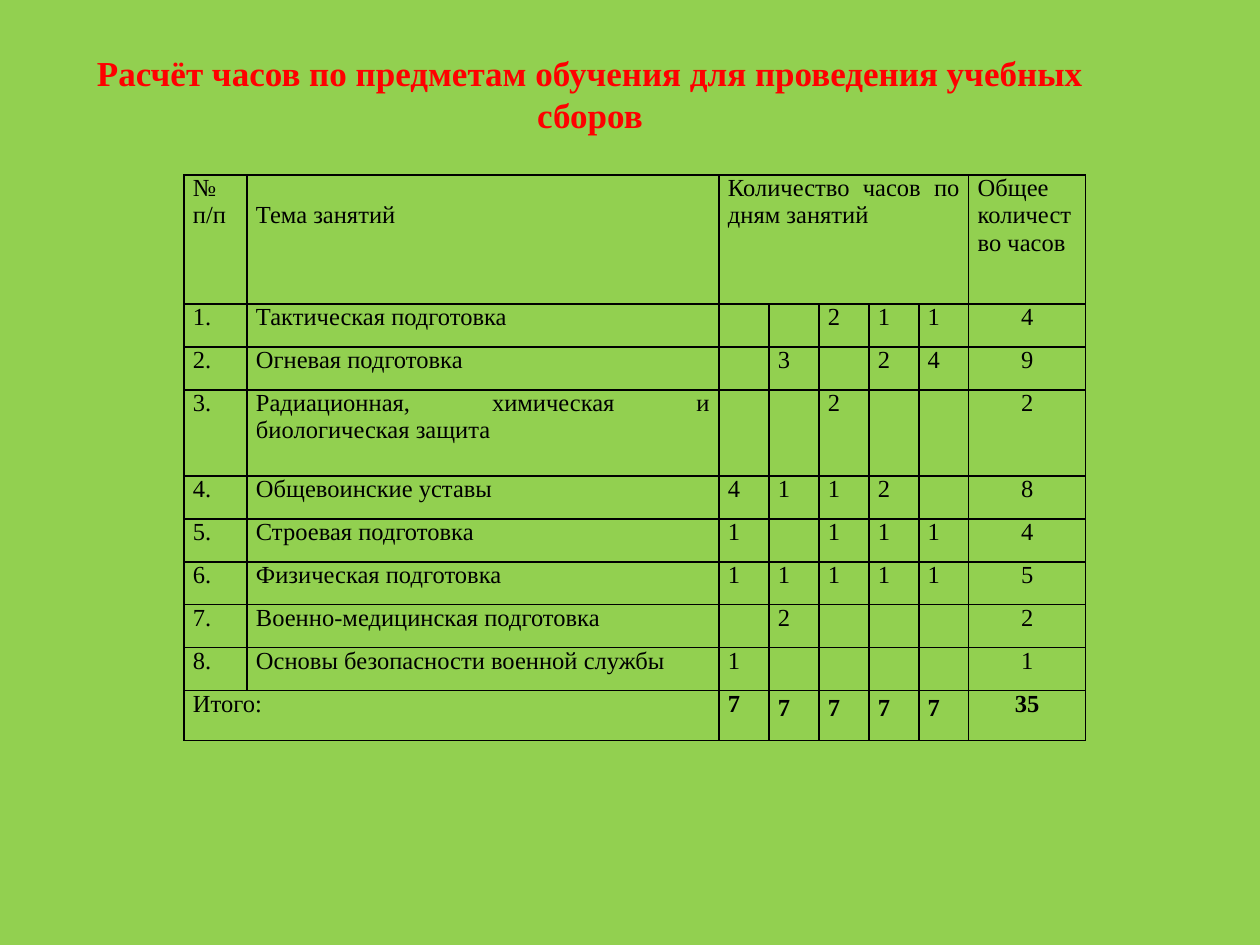
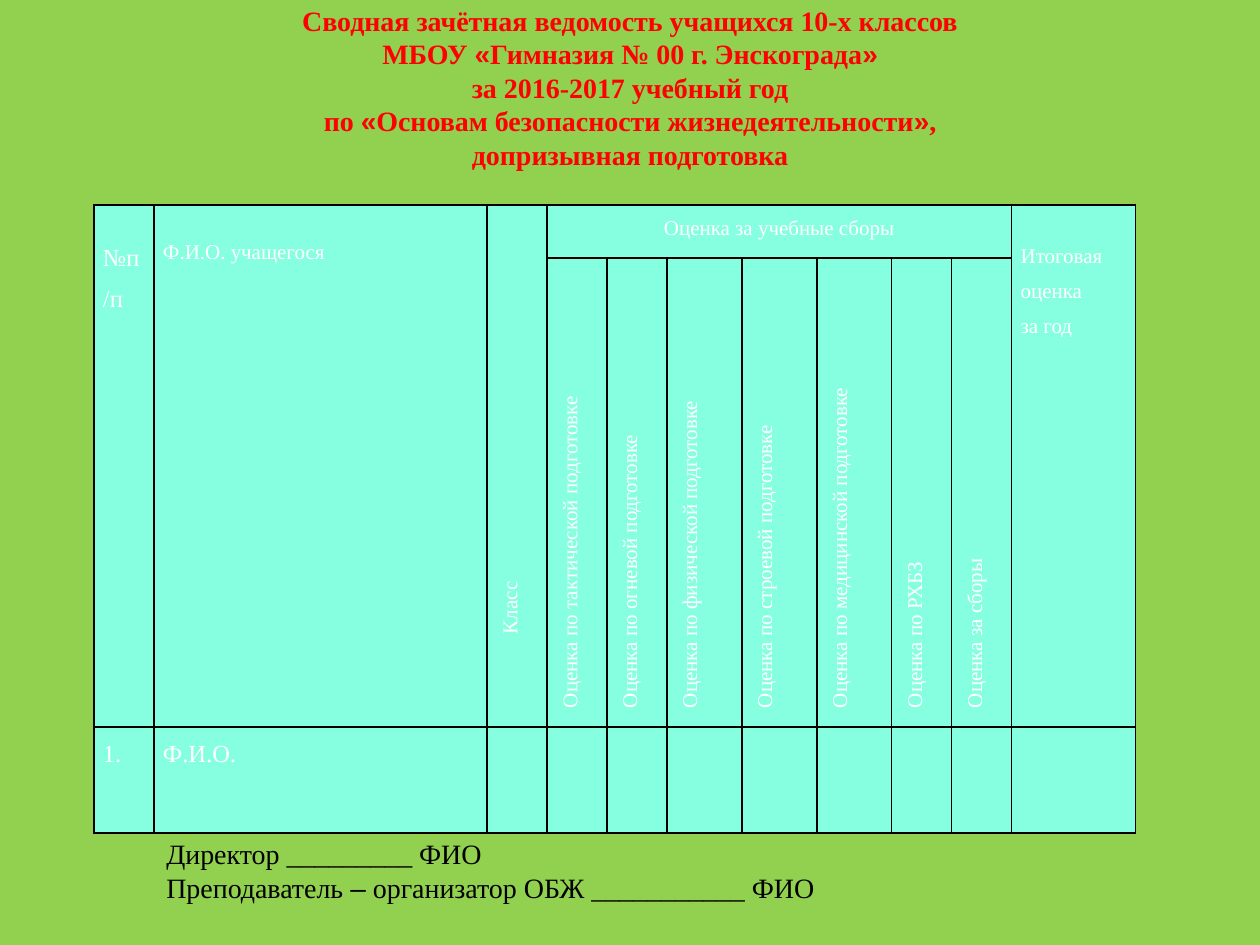
from itertools import groupby

from lxml import etree
from pptx import Presentation
from pptx.dml.color import RGBColor
from pptx.enum.text import MSO_ANCHOR as ANCHOR, PP_ALIGN as ALIGN
from pptx.oxml.ns import qn
from pptx.util import Pt

PX = 914400 / 126  # EMU in one px
COLORS = {"back": "92D050", "title": "FF0000", "ink": "000000",
          "cell": "85FFE0", "white": "FFFFFF"}
FONT, MARK_FONT, MARKS = "Times New Roman", "Arial", "«»–"


def write(tf, lines, size, color="ink", bold=False, **para):
    """Write one paragraph per line; para holds paragraph formats."""
    for i, line in enumerate(lines):
        p = tf.add_paragraph() if i else tf.paragraphs[0]
        for name, value in para.items():
            setattr(p, name, value)
        for is_mark, chars in groupby(line, lambda c: c in MARKS):
            r = p.add_run()
            r.text = "".join(chars)
            r.font.color.rgb = RGBColor.from_string(COLORS[color])
            values = {"name": MARK_FONT if is_mark else FONT,
                      "size": Pt(size), "bold": bold}
            for name, value in values.items():
                setattr(r.font, name, value)


def add_grid(slide, left, top, cols, rows, fill=None):
    """Add a table with thin black borders, sized by its columns and rows."""
    box = [round(v * PX) for v in (left, top, sum(cols), sum(rows))]
    table = slide.shapes.add_table(len(rows), len(cols), *box).table
    table.first_row = table.horz_banding = False
    for col, width in zip(table.columns, cols):
        col.width = round(width * PX)
    for row, height in zip(table.rows, rows):
        row.height = round(height * PX)
    for cell in table.iter_cells():
        cell.margin_left = cell.margin_right = round(9 * PX)
        cell.margin_top = cell.margin_bottom = 0
        if fill:
            cell.fill.solid()
            cell.fill.fore_color.rgb = RGBColor.from_string(COLORS[fill])
        else:
            cell.fill.background()
        tcPr = cell._tc.get_or_add_tcPr()
        for i, side in enumerate(("lnL", "lnR", "lnT", "lnB")):
            ln = etree.Element(qn(f"a:{side}"), w=str(Pt(1)))
            line_fill = etree.SubElement(ln, qn("a:solidFill"))
            etree.SubElement(line_fill, qn("a:srgbClr"), val=COLORS["ink"])
            tcPr.insert(i, ln)
    return table


prs = Presentation()
prs.slide_width, prs.slide_height = round(1260 * PX), round(945 * PX)

# Slides with their titles and signature lines:
# box, vertical margin, size, colour, bold, alignment, lines
pages = [
    [((74, 45, 1032, 97), 6, 20, "title", True, ALIGN.CENTER,
      ["Расчёт часов по предметам обучения для проведения учебных сборов"])],
    [((262, 0, 736, 174), 3, 16, "title", True, ALIGN.CENTER,
      ["Сводная зачётная ведомость учащихся 10-х классов",
       "МБОУ «Гимназия № 00 г. Энскограда»",
       "за 2016-2017 учебный год",
       "по «Основам безопасности жизнедеятельности», допризывная подготовка"]),
     ((154, 830, 853, 81), 6, 16, "ink", False, ALIGN.JUSTIFY,
      ["Директор _________ ФИО",
       "Преподаватель – организатор ОБЖ ___________ ФИО"])],
]
slides = []
for boxes in pages:
    s = prs.slides.add_slide(prs.slide_layouts[6])
    s.background.fill.solid()
    s.background.fill.fore_color.rgb = RGBColor.from_string(COLORS["back"])
    for box, margin, size, color, bold, align, lines in boxes:
        sp = s.shapes.add_textbox(*[round(v * PX) for v in box])
        tf = sp.text_frame
        tf.word_wrap, tf.vertical_anchor = True, ANCHOR.MIDDLE
        tf.margin_top = tf.margin_bottom = round(margin * PX)
        write(tf, lines, size, color, bold, alignment=align,
              line_spacing=Pt(1.2 * size))
    slides.append(s)
hours_slide, grades_slide = slides

# Slide 1: hours by subject and day, 0 is an empty cell
subjects = [
    ("Тактическая подготовка", [0, 0, 2, 1, 1]),
    ("Огневая подготовка", [0, 3, 0, 2, 4]),
    ("Радиационная, химическая и биологическая защита", [0, 0, 2, 0, 0]),
    ("Общевоинские уставы", [4, 1, 1, 2, 0]),
    ("Строевая подготовка", [1, 0, 1, 1, 1]),
    ("Физическая подготовка", [1, 1, 1, 1, 1]),
    ("Военно-медицинская подготовка", [0, 2, 0, 0, 0]),
    ("Основы безопасности военной службы", [1, 0, 0, 0, 0]),
]
t = add_grid(hours_slide, 184, 175, [63, 472] + [50] * 5 + [117],
             [129, 43, 43, 86] + [43] * 5 + [50])
last = len(subjects) + 1
t.cell(0, 2).merge(t.cell(0, 6))
t.cell(last, 0).merge(t.cell(last, 1))

headings = {0: ["№", "п/п"], 1: ["Тема занятий"],
            2: ["Количество часов по дням занятий"],
            7: ["Общее количество часов"]}
for col, lines in headings.items():
    write(t.cell(0, col).text_frame, lines, 14, alignment=ALIGN.JUSTIFY)
t.cell(0, 1).margin_top = round(27 * PX)

for row, (subject, hours) in enumerate(subjects, 1):
    values = [f"{row}.", subject] + hours + [sum(hours)]
    for col, value in enumerate(values):
        if value:
            write(t.cell(row, col).text_frame, [str(value)], 14,
                  alignment=ALIGN.CENTER if col == 7 else ALIGN.JUSTIFY)

# Totals row
day_totals = [sum(day) for day in zip(*[hours for _, hours in subjects])]
write(t.cell(last, 0).text_frame, ["Итого:"], 14, alignment=ALIGN.JUSTIFY)
for col, total in enumerate(day_totals + [sum(day_totals)], 2):
    para = {"alignment": ALIGN.CENTER if col == 7 else ALIGN.JUSTIFY}
    if 2 < col < 7:
        para.update(line_spacing=1.15, space_after=Pt(10))
    write(t.cell(last, col).text_frame, [str(total)], 14, bold=True, **para)

# Slide 2: grade sheet
t = add_grid(grades_slide, 94, 205,
             [60, 333] + [60] * 3 + [75] * 3 + [60, 60, 124],
             [53, 469, 106], "cell")
for col in (0, 1, 2, 10):
    t.cell(0, col).merge(t.cell(1, col))
t.cell(0, 3).merge(t.cell(0, 9))

# Level text: row, column, top margin, size, alignment, lines
level_cells = [
    (0, 0, 26, 14, ALIGN.JUSTIFY, ["№п/п"]),
    (0, 1, 24, 12, ALIGN.JUSTIFY, ["Ф.И.О. учащегося"]),
    (0, 3, 0, 12, ALIGN.CENTER, ["Оценка за учебные сборы"]),
    (0, 10, 28, 12, ALIGN.JUSTIFY, ["Итоговая оценка", "за год"]),
    (2, 0, 0, 14, ALIGN.JUSTIFY, ["1."]),
    (2, 1, 0, 14, ALIGN.JUSTIFY, ["Ф.И.О."]),
]
for row, col, margin, size, align, lines in level_cells:
    cell = t.cell(row, col)
    cell.margin_top = round(margin * PX)
    write(cell.text_frame, lines, size, "white", alignment=align,
          line_spacing=1.5)

# Upright text: row, column, indent, text
grades = ["по тактической подготовке", "по огневой подготовке",
          "по физической подготовке", "по строевой подготовке",
          "по медицинской подготовке", "по РХБЗ", "за сборы"]
upright_cells = [(0, 2, 84, "Класс")]
upright_cells += [(1, col, 10, f"Оценка {grade}")
                  for col, grade in enumerate(grades, 3)]
for row, col, indent, text in upright_cells:
    cell = t.cell(row, col)
    cell._tc.get_or_add_tcPr().set("vert", "vert270")
    write(cell.text_frame, [text], 12, "white", alignment=ALIGN.JUSTIFY,
          line_spacing=1.5)
    pPr = cell.text_frame.paragraphs[0]._p.get_or_add_pPr()
    pPr.set("marL", str(round(indent * PX)))

prs.save("out.pptx")
